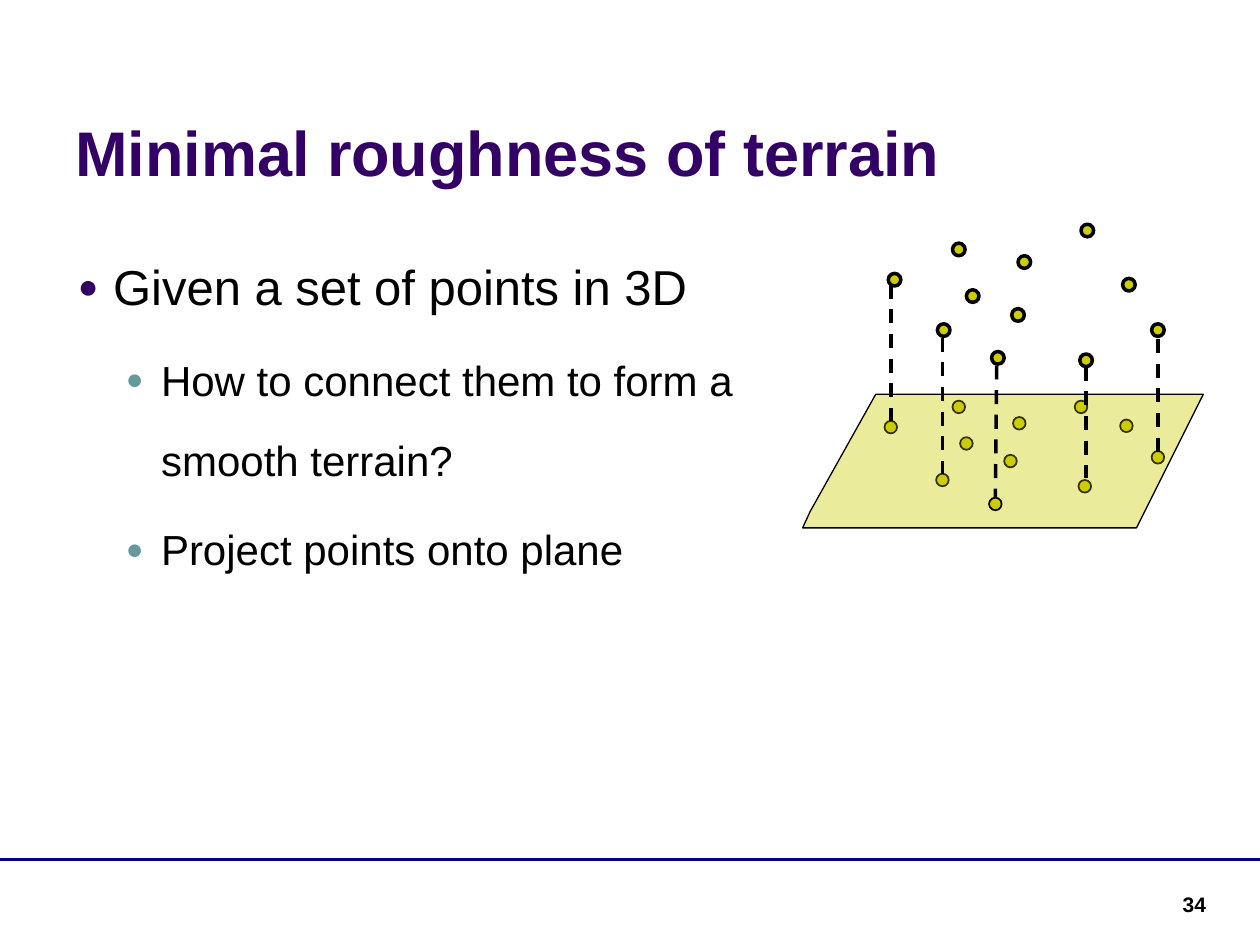
from pptx import Presentation
from pptx.dml.color import RGBColor
from pptx.enum.dml import MSO_LINE
from pptx.enum.shapes import MSO_CONNECTOR as CONN, MSO_SHAPE as SHAPE
from pptx.enum.text import MSO_ANCHOR as ANCHOR, PP_ALIGN as ALIGN
from pptx.oxml.ns import qn
from pptx.util import Inches, Pt
from lxml.etree import SubElement

FONT = "Arial"
BLACK, PURPLE, TEAL, NAVY = "000000", "330066", "669999", "000080"
YELLOW, OLIVE = "CCCC00", "333300"
DOT = 0.1

BULLETS = [
    ("Given a set of points in 3D", 0),
    ("How to connect them to form a smooth terrain?", 1),
    ("Project points onto plane", 1),
]
LEVELS = [
    {"size": 28, "margin": 0.4, "bullet": PURPLE},
    {"size": 24, "margin": 0.78, "bullet": TEAL},
]
POINTS = [
    (7.05, 2.17), (7.56, 1.93), (7.67, 2.3), (8.08, 2.03), (8.58, 1.78), (8.03, 2.45),
    (8.57, 2.81), (7.87, 2.79), (7.44, 2.57), (8.91, 2.21), (9.14, 2.57),
]
PROJECTED = [
    (7.02, 3.34), (7.56, 3.18), (7.62, 3.47), (8.04, 3.31), (8.53, 3.18), (7.97, 3.61),
    (8.56, 3.81), (7.43, 3.76), (8.89, 3.33), (9.14, 3.58),
]
FRONT = (7.85, 3.95)
PLANE = [(6.43, 4.06), (6.95, 3.13), (9.55, 3.13), (9.02, 4.19), (6.37, 4.19)]
DROPS = [
    (7.07, 2.26, 7.07, 3.34), (7.91, 2.9, 7.9, 3.95), (9.19, 2.69, 9.19, 3.65),
    (7.48, 2.68, 7.48, 3.76), (8.62, 2.91, 8.62, 3.79),
]


def rgb(value):
    return RGBColor.from_string(value)


class Board:
    """Holds the style and the current slide, and draws each kind of element."""

    def __init__(self, slide, font):
        self.shapes = slide.shapes
        self.font = font

    def paint(self, sp, fill, line, width):
        sp.shadow.inherit = False
        sp.fill.solid()
        sp.fill.fore_color.rgb = rgb(fill)
        sp.line.color.rgb = rgb(line)
        sp.line.width = Pt(width)

    def box(self, x, y, w, h, anchor=ANCHOR.TOP):
        tf = self.shapes.add_textbox(*map(Inches, (x, y, w, h))).text_frame
        for name, value in {"word_wrap": True, "vertical_anchor": anchor}.items():
            setattr(tf, name, value)
        return tf

    def text(self, p, text, size, color=BLACK, bold=False, align=ALIGN.LEFT):
        p.alignment = align
        r = p.add_run()
        r.text = text
        for name, value in {"name": self.font, "size": Pt(size), "bold": bold}.items():
            setattr(r.font, name, value)
        r.font.color.rgb = rgb(color)

    def bullets(self, tf, items):
        for i, (text, level) in enumerate(items):
            p = tf.add_paragraph() if i else tf.paragraphs[0]
            style = LEVELS[level]
            size = style["size"]
            spacing = {"level": level, "line_spacing": 1.6, "space_before": Pt(size * 0.2)}
            for name, value in spacing.items():
                setattr(p, name, value)
            self.text(p, text, size)
            pPr = p._p.get_or_add_pPr()
            pPr.set("marL", str(Inches(style["margin"])))
            pPr.set("indent", str(Inches(-0.28)))
            color = SubElement(pPr, qn("a:buClr"))
            SubElement(color, qn("a:srgbClr"), val=style["bullet"])
            SubElement(pPr, qn("a:buSzPct"), val="70000")
            SubElement(pPr, qn("a:buFont"), typeface=self.font)
            SubElement(pPr, qn("a:buChar"), char="●")

    def dot(self, x, y, line, width):
        sp = self.shapes.add_shape(SHAPE.OVAL, *map(Inches, (x, y, DOT, DOT)))
        self.paint(sp, YELLOW, line, width)

    def polygon(self, points, fill, opacity):
        start, *rest = [(Inches(x), Inches(y)) for x, y in points]
        builder = self.shapes.build_freeform(*start)
        builder.add_line_segments(rest, close=True)
        sp = builder.convert_to_shape()
        self.paint(sp, fill, BLACK, 0.75)
        color = sp._element.spPr.find(qn("a:solidFill"))[0]
        SubElement(color, qn("a:alpha"), val=str(opacity * 1000))

    def line(self, ends, color, dash=None):
        sp = self.shapes.add_connector(CONN.STRAIGHT, *map(Inches, ends))
        sp.line.color.rgb = rgb(color)
        sp.line.width = Pt(2)
        if dash:
            sp.line.dash_style = dash
        SubElement(sp._element.spPr, qn("a:effectLst"))


def main():
    prs = Presentation()
    prs.slide_width, prs.slide_height = Inches(10), Inches(7.5)
    board = Board(prs.slides.add_slide(prs.slide_layouts[6]), FONT)

    board.line((0, 6.82, 10, 6.82), NAVY)
    number = board.box(8.35, 7.03, 1.32, 0.28)
    board.text(number.paragraphs[0], "34", 12, bold=True, align=ALIGN.RIGHT)
    board.bullets(board.box(0.4, 1.71, 5.63, 5.03), BULLETS)
    title = board.box(0.5, 0.13, 9.3, 1.42, ANCHOR.BOTTOM)
    board.text(title.paragraphs[0], "Minimal roughness of terrain", 36, PURPLE, bold=True)

    for x, y in POINTS:
        board.dot(x, y, BLACK, 2)
    board.polygon(PLANE, YELLOW, 39)
    for x, y in PROJECTED:
        board.dot(x, y, OLIVE, 1)
    board.dot(*FRONT, BLACK, 1)
    for ends in DROPS:
        board.line(ends, BLACK, MSO_LINE.DASH)

    prs.save("out.pptx")


if __name__ == "__main__":
    main()
